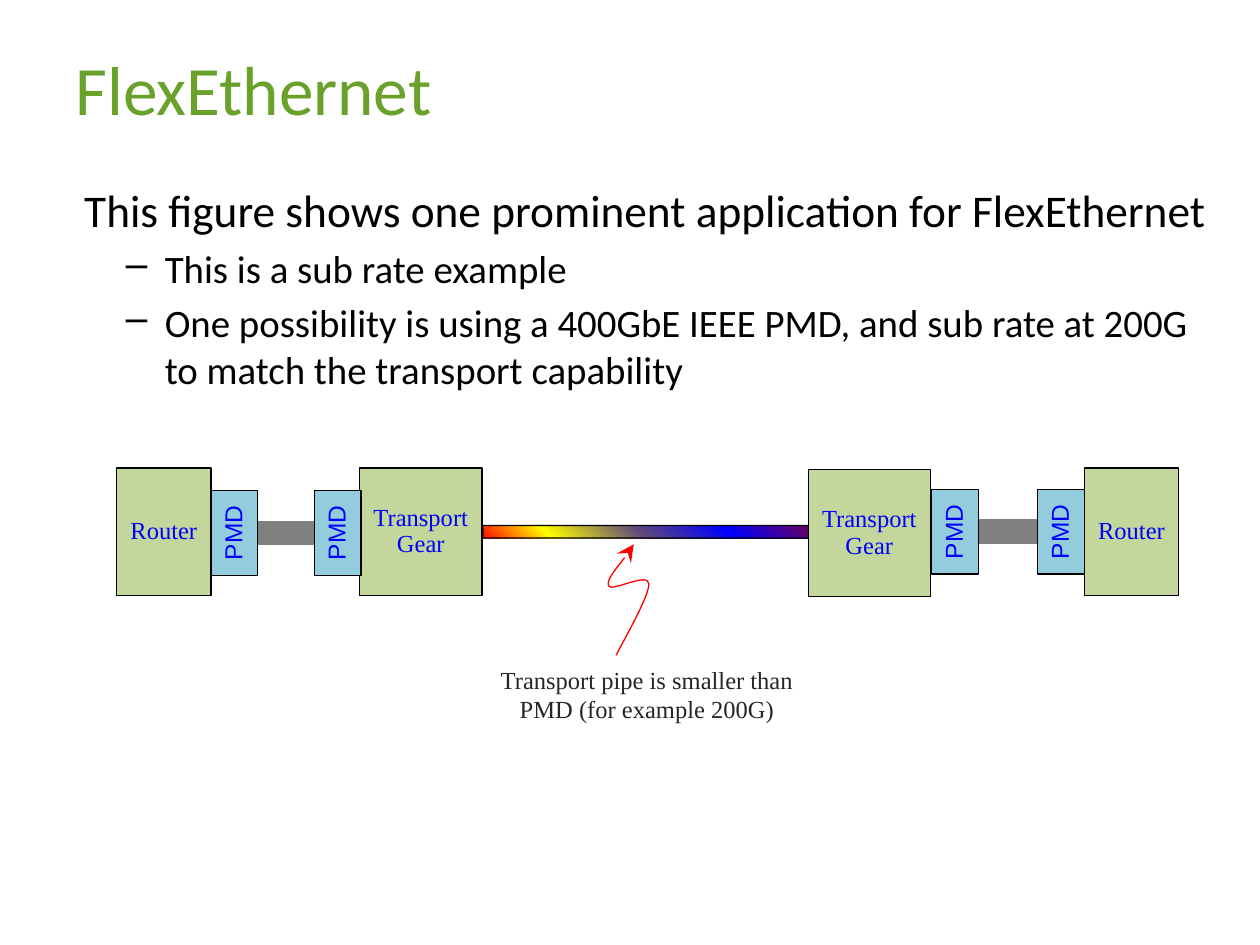
import pptx
import pptx.util
import pptx.dml.color
import pptx.enum.shapes
import pptx.enum.text
import pptx.oxml
import pptx.oxml.ns
from pptx.util import Inches, Pt

RGBColor = pptx.dml.color.RGBColor
TITLE_GREEN = RGBColor(0x69, 0xA1, 0x2B)
BOX_GREEN = RGBColor(0xC3, 0xD6, 0x9B)
PMD_BLUE = RGBColor(0x93, 0xCD, 0xDD)
LABEL_BLUE = RGBColor(0x00, 0x00, 0xFF)
CABLE_GRAY = RGBColor(0x80, 0x80, 0x80)
CAPTION_GRAY = RGBColor(0x26, 0x26, 0x26)
BLACK = RGBColor(0x00, 0x00, 0x00)
RED = RGBColor(0xFF, 0x00, 0x00)
RAINBOW = [(0, RED), (21, RGBColor(0xFF, 0xFF, 0x00)), (48, RGBColor(0x60, 0x4A, 0x7B)),
           (74, LABEL_BLUE), (98, RGBColor(0x66, 0x00, 0x66))]

SHAPES = pptx.enum.shapes.MSO_SHAPE
ALIGN = pptx.enum.text.PP_ALIGN
MIDDLE = pptx.enum.text.MSO_ANCHOR.MIDDLE
NAMESPACE = pptx.oxml.ns.nsdecls("a")


def element(markup):
    """Parse a DrawingML element whose tag is written without prefix declaration."""
    tag = markup.split(maxsplit=1)[0]
    return pptx.oxml.parse_xml(markup.replace(tag, f"{tag} {NAMESPACE}", 1))


def style_runs(paragraph, size, font, color):
    for run in paragraph.runs:
        run.font.size = Pt(size)
        run.font.name = font
        run.font.color.rgb = color


def set_margins(frame, horizontal, vertical):
    frame.margin_left = frame.margin_right = Inches(horizontal)
    frame.margin_top = frame.margin_bottom = Inches(vertical)


def add_text_box(slide, left, top, width, height):
    shape = slide.shapes.add_textbox(Inches(left), Inches(top), Inches(width), Inches(height))
    shape.text_frame.word_wrap = True
    return shape.text_frame


def add_title(slide, left, top, width, height):
    frame = add_text_box(slide, left, top, width, height)
    frame.vertical_anchor = MIDDLE
    frame.text = "FlexEthernet"
    style_runs(frame.paragraphs[0], 39.6, "Calibri", TITLE_GREEN)


def add_body(slide, left, top, width, height):
    frame = add_text_box(slide, left, top, width, height)
    frame.text = "This figure shows one prominent application for FlexEthernet"
    lead = frame.paragraphs[0]
    lead._p.get_or_add_pPr().set("marL", str(Inches(0.07)))
    style_runs(lead, 25.9, "Calibri", BLACK)
    for text in ("This is a sub rate example",
                 "One possibility is using a 400GbE IEEE PMD, and sub rate at 200G "
                 "to match the transport capability"):
        paragraph = frame.add_paragraph()
        paragraph.text = text
        paragraph.level = 1
        paragraph.space_before = Pt(4.4)
        properties = paragraph._p.get_or_add_pPr()
        properties.set("marL", str(Inches(0.71)))
        properties.set("indent", str(Inches(-0.31)))
        properties.append(element('<a:buChar char="–"/>'))
        style_runs(paragraph, 22.2, "Calibri", BLACK)


def add_box(slide, center_x, center_y, width, height, label, fill, font, rotation=0):
    shape = slide.shapes.add_shape(
        SHAPES.RECTANGLE, Inches(center_x - width / 2), Inches(center_y - height / 2),
        Inches(width), Inches(height))
    shape.shadow.inherit = False
    shape.rotation = rotation
    shape.fill.solid()
    shape.fill.fore_color.rgb = fill
    shape.line.color.rgb = BLACK
    shape.line.width = Pt(0.75)
    frame = shape.text_frame
    frame.word_wrap = True
    frame.vertical_anchor = MIDDLE
    set_margins(frame, 0.08, 0.04)
    frame.text = label
    paragraph = frame.paragraphs[0]
    paragraph.alignment = ALIGN.CENTER
    paragraph.line_spacing = 0.9
    style_runs(paragraph, 14, font, LABEL_BLUE)


def add_cable(slide, start_x, end_x, y):
    cable = slide.shapes.add_connector(
        pptx.enum.shapes.MSO_CONNECTOR.STRAIGHT,
        Inches(start_x), Inches(y), Inches(end_x), Inches(y))
    cable.line.color.rgb = CABLE_GRAY
    cable.line.width = Pt(14)
    cable._element.spPr.append(element("<a:effectLst />"))


def add_site(slide, router_x, router_pmd_x, gear_pmd_x, gear_x, pmd_y, gear_y):
    """Place a router linked to its transport gear; each x is the centre of a box."""
    add_box(slide, gear_x, gear_y, 0.97, 1.01, "Transport Gear", BOX_GREEN, "Times New Roman")
    add_box(slide, router_x, 4.22, 0.75, 1.01, "Router", BOX_GREEN, "Times New Roman")
    left_pmd, right_pmd = sorted((router_pmd_x, gear_pmd_x))
    add_cable(slide, left_pmd + 0.18, right_pmd - 0.18, pmd_y)
    for center_x in (left_pmd, right_pmd):
        add_box(slide, center_x, pmd_y, 0.67, 0.37, "PMD", PMD_BLUE, "Arial", 270)


def add_transport_pipe(slide, left, top, length, thickness):
    """Add a can lying on its side, filled with a rainbow gradient."""
    offset = (length - thickness) / 2
    pipe = slide.shapes.add_shape(SHAPES.CAN, Inches(left + offset), Inches(top - offset),
                                  Inches(thickness), Inches(length))
    pipe.rotation = 270
    pipe.shadow.inherit = False
    pipe.line.color.rgb = BLACK
    pipe.line.width = Pt(0.75)
    stops = "".join(f'<a:gs pos="{position * 1000}"><a:srgbClr val="{color}"/></a:gs>'
                    for position, color in RAINBOW)
    gradient = element(f'<a:gradFill rotWithShape="1"><a:gsLst>{stops}</a:gsLst>'
                       '<a:lin ang="2700000" scaled="1"/></a:gradFill>'
                       .replace("<a:gradFill ", "<a:gradFill  ", 1))
    pipe._element.spPr.find(pptx.oxml.ns.qn("a:prstGeom")).addnext(gradient)


def add_callout_arrow(slide, left, top):
    """Draw a curved arrow; its points are a start and three controls per curve."""
    points = [(0.2, 0), (0.17, 0.06), (-0.02, 0.28), (0, 0.33), (0.02, 0.38),
              (0.31, 0.22), (0.32, 0.31), (0.33, 0.4), (0.11, 0.78), (0.06, 0.88)]
    points = [(Inches(left + x), Inches(top + y)) for x, y in points]
    builder = slide.shapes.build_freeform(*points[0])
    builder.add_line_segments(points[1:], close=False)
    arrow = builder.convert_to_shape()
    arrow.shadow.inherit = False
    arrow.fill.background()
    arrow.line.color.rgb = RED
    arrow.line.width = Pt(0.75)
    arrow.line._get_or_add_ln().append(element('<a:headEnd type="stealth" w="lg" len="lg"/>'))
    segments = arrow._element.findall(".//" + pptx.oxml.ns.qn("a:lnTo"))
    for first in range(0, len(segments), 3):
        curve = element("<a:cubicBezTo />")
        segments[first].addprevious(curve)
        for segment in segments[first:first + 3]:
            curve.append(segment[0])
            segment.getparent().remove(segment)


def add_caption(slide, left, top, width, height):
    frame = add_text_box(slide, left, top, width, height)
    frame.vertical_anchor = MIDDLE
    set_margins(frame, 0.14, 0.14)
    frame.text = "Transport pipe is smaller than PMD (for example 200G)"
    frame.paragraphs[0].alignment = ALIGN.CENTER
    style_runs(frame.paragraphs[0], 14, "Times New Roman", CAPTION_GRAY)


def main():
    presentation = pptx.Presentation()
    presentation.slide_width = Inches(10)
    presentation.slide_height = Inches(7.5)
    slide = presentation.slides.add_slide(presentation.slide_layouts[6])
    add_title(slide, 0.5, 0.3, 9, 0.79)
    add_body(slide, 0.5, 1.4, 9.23, 1.88)
    add_transport_pipe(slide, 3.81, 4.17, 2.64, 0.1)
    add_site(slide, 1.3, 1.86, 2.68, 3.34, 4.23, 4.22)
    add_site(slide, 8.98, 8.42, 7.58, 6.9, 4.22, 4.23)
    add_callout_arrow(slide, 4.83, 4.32)
    add_caption(slide, 3.78, 5.23, 2.71, 0.56)
    presentation.save("out.pptx")


if __name__ == "__main__":
    main()
